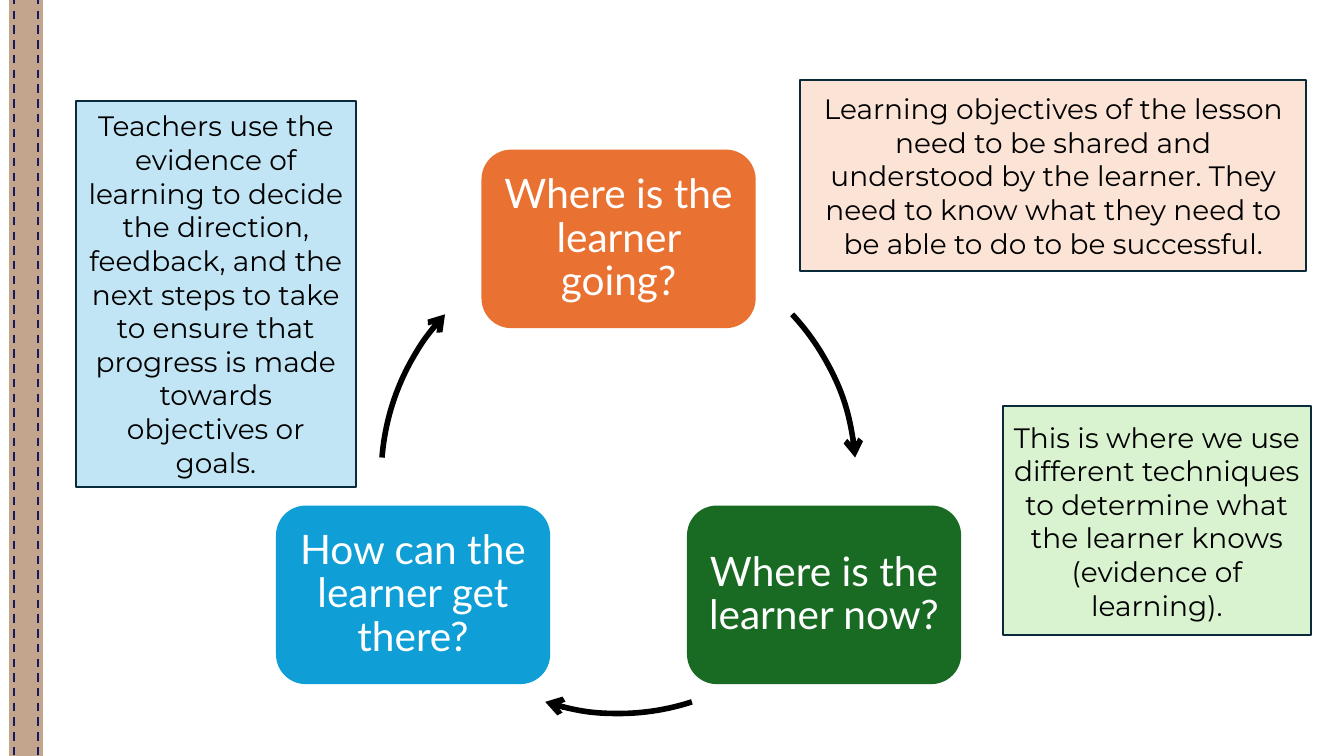
import math
from dataclasses import dataclass

from lxml import etree
from pptx import Presentation
from pptx import util as u
from pptx.dml.color import RGBColor
from pptx.enum import dml, shapes, text
from pptx.oxml.ns import qn


@dataclass(frozen=True)
class Theme:
    band: str = "C3A48C"
    stitch: str = "15195D"
    arrow: str = "000000"
    note_line: str = "092A39"
    note_text: str = "000000"
    question_text: str = "FFFFFF"
    orange: str = "E97132"
    green: str = "196B24"
    blue: str = "0F9ED5"
    pale_orange: str = "FBE3D6"
    pale_green: str = "D9F2D0"
    pale_blue: str = "C1E5F5"
    question_font: str = "Lato"
    note_font: str = "Montserrat"
    question_size: int = 29
    note_size: int = 20


theme = Theme()
rgb = RGBColor.from_string

prs = Presentation()
prs.slide_width, prs.slide_height = u.Cm(33.87), u.Cm(19.05)
slide = prs.slides.add_slide(prs.slide_layouts[6])


def add_block(kind, box, fill, line=None, line_width=0.75):
    """Add a shadowless preset shape; box is left, top, width, height in cm."""
    block = slide.shapes.add_shape(kind, *(u.Cm(length) for length in box))
    block.shadow.inherit = False
    if fill:
        block.fill.solid()
        block.fill.fore_color.rgb = rgb(fill)
    else:
        block.fill.background()
    if line:
        block.line.color.rgb = rgb(line)
        block.line.width = u.Pt(line_width)
    else:
        block.line.fill.background()
    return block


def write_centred(block, words, font, size, color):
    frame = block.text_frame
    frame.word_wrap = True
    frame.vertical_anchor = text.MSO_ANCHOR.MIDDLE
    frame.text = words
    paragraph = frame.paragraphs[0]
    paragraph.alignment = text.PP_ALIGN.CENTER
    run_font = paragraph.runs[0].font
    run_font.name, run_font.size = font, u.Pt(size)
    run_font.color.rgb = rgb(color)


# Stitched band down the left edge
add_block(shapes.MSO_SHAPE.RECTANGLE, (0.25, -0.02, 0.82, 19.08), theme.band, theme.band)
for stitch_x in (0.36, 0.96):
    stitch = slide.shapes.add_connector(
        shapes.MSO_CONNECTOR.STRAIGHT,
        u.Cm(stitch_x), u.Cm(-0.1), u.Cm(stitch_x), u.Cm(19.13))
    stitch.line.color.rgb = rgb(theme.stitch)
    stitch.line.width = u.Pt(1.5)
    stitch.line.dash_style = dml.MSO_LINE.DASH
    etree.SubElement(stitch._element.spPr, qn("a:effectLst"))

# Questions spaced evenly around the cycle, each with the arrow that follows it
centre_x, centre_y, radius = 15.59, 12.0, 5.98
question_width, question_height = 6.91, 4.5
cycle = [
    ("Where is the learner going?", theme.orange, -90, (317, 355.5)),
    ("Where is the learner now?", theme.green, 30, (72, 108)),
    ("How can the learner get there?", theme.blue, 150, (184.5, 223)),
]
for words, fill, angle, arc_ends in cycle:
    left = centre_x + radius * math.cos(math.radians(angle)) - question_width / 2
    top = centre_y + radius * math.sin(math.radians(angle)) - question_height / 2
    question = add_block(shapes.MSO_SHAPE.ROUNDED_RECTANGLE,
                         (left, top, question_width, question_height), fill)
    write_centred(question, words, theme.question_font, theme.question_size,
                  theme.question_text)
    frame = question.text_frame
    frame.margin_left = frame.margin_right = u.Cm(0.3)
    frame.margin_top = frame.margin_bottom = u.Cm(0.3)
    frame.paragraphs[0].line_spacing = 0.9

    arrow = add_block(shapes.MSO_SHAPE.ARC,
                      (centre_x - radius, centre_y - radius, 2 * radius, 2 * radius),
                      None, theme.arrow, 4)
    for index, degrees in enumerate(arc_ends):
        arrow.adjustments[index] = degrees * 0.6  # 60000 units a degree, scaled by 100000
    etree.SubElement(arrow.line._get_or_add_ln(), qn("a:tailEnd"), type="arrow")

# Notes beside the questions
notes = [
    ("Learning objectives of the lesson need to be shared and understood by the "
     "learner. They need to know what they need to be able to do to be successful.",
     theme.pale_orange, (20.17, 2.01, 12.75, 4.83)),
    ("This is where we use different techniques to determine what the learner "
     "knows (evidence of learning).",
     theme.pale_green, (25.27, 10.24, 7.77, 5.77)),
    ("Teachers use the evidence of learning to decide the direction, feedback, and "
     "the next steps to take to ensure that progress is made towards objectives or goals.",
     theme.pale_blue, (1.91, 2.54, 7.06, 9.73)),
]
for words, fill, box in notes:
    note = add_block(shapes.MSO_SHAPE.RECTANGLE, box, fill, theme.note_line, 1.5)
    write_centred(note, words, theme.note_font, theme.note_size, theme.note_text)

prs.save("out.pptx")
